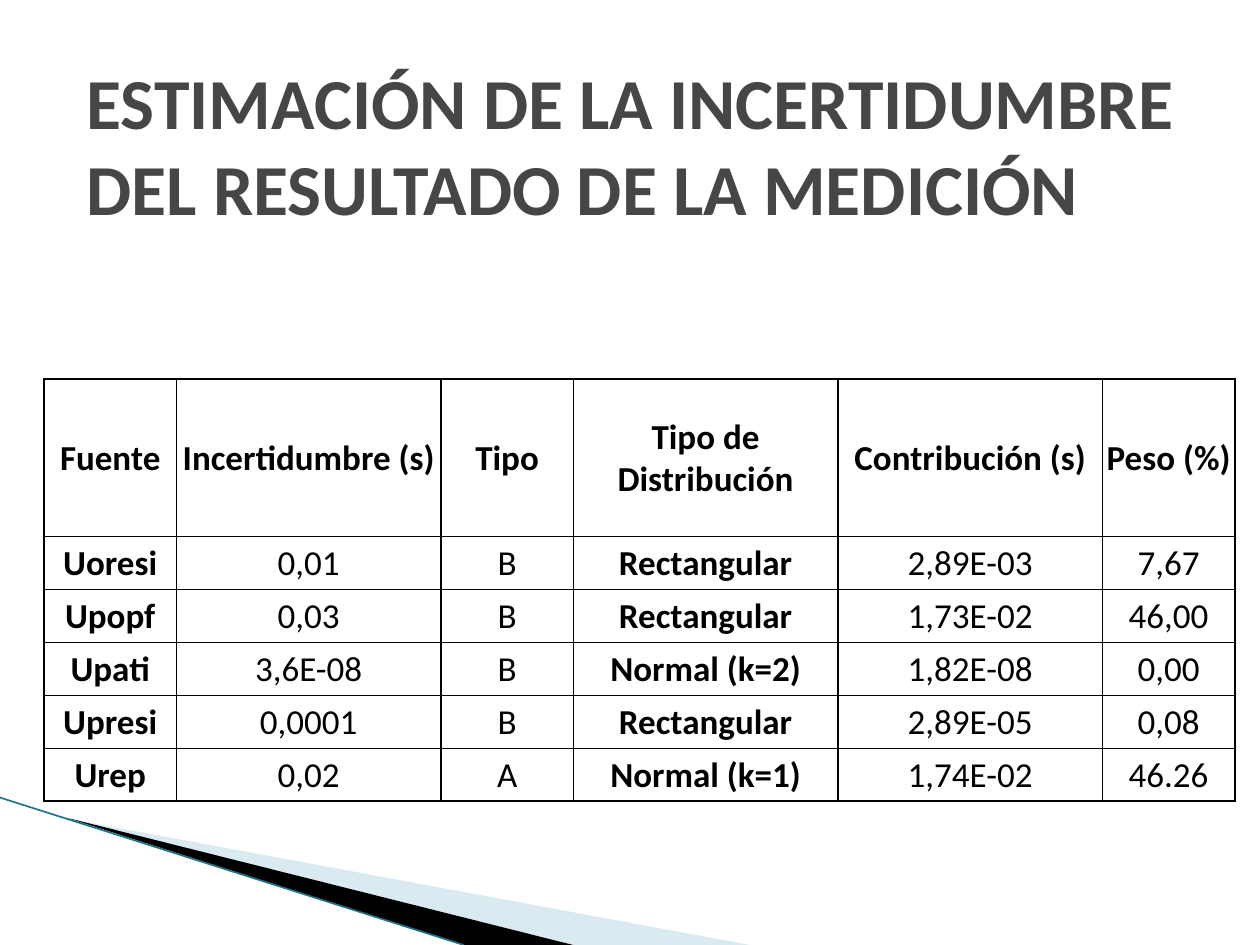
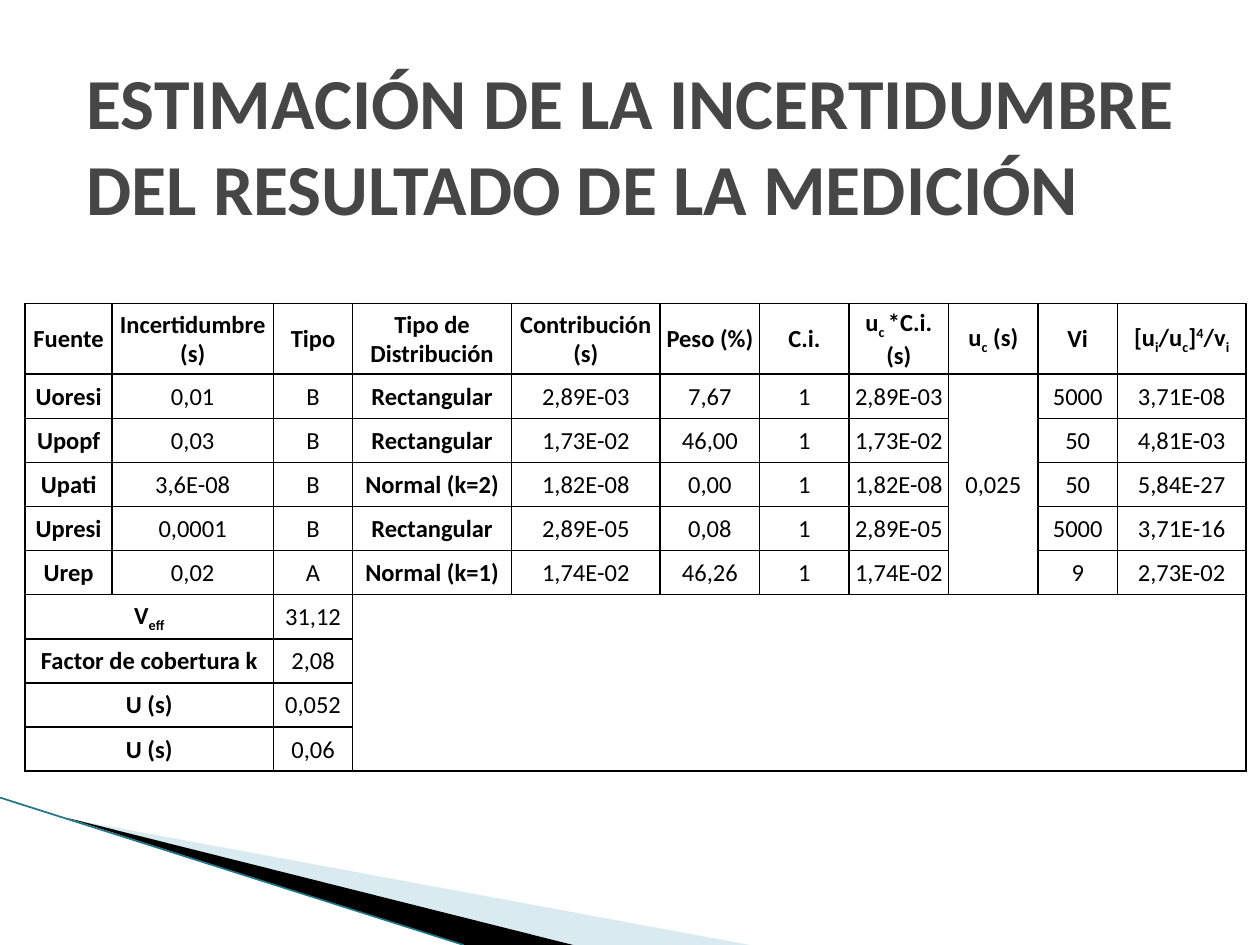
from lxml import etree
from pptx import Presentation
from pptx.dml.color import RGBColor
from pptx.enum.shapes import MSO_CONNECTOR
from pptx.enum.text import MSO_ANCHOR, PP_ALIGN
from pptx.oxml import parse_xml
from pptx.oxml.ns import nsdecls, qn
from pptx.util import Inches, Pt

COLORS = {
    "title": "464646",
    "text": "000000",
    "grid": "000000",
    "pale_band": "A0CBDC",
    "dark_band": "000000",
    "edge": "1F7488",
}
FONT = "Calibri"
TITLE = "ESTIMACIÓN DE LA INCERTIDUMBRE DEL RESULTADO DE LA MEDICIÓN"
TITLE_BOX = (0.59, 0.28, 9.06, 1.73)
CORNER_BOX = (0, 6.33, 5.95, 1.17)
BASELINES = {"_": "-25000", "^": "30000"}
BOLD_COLUMNS = (0, 3)

HEADERS = ["Fuente", "Incertidumbre (s)", "Tipo", "Tipo de Distribución",
           "Contribución (s)", "Peso (%)"]
SOURCES = [
    ["Uoresi", "0,01", "B", "Rectangular", "2,89E-03", "7,67"],
    ["Upopf", "0,03", "B", "Rectangular", "1,73E-02", "46,00"],
    ["Upati", "3,6E-08", "B", "Normal (k=2)", "1,82E-08", "0,00"],
    ["Upresi", "0,0001", "B", "Rectangular", "2,89E-05", "0,08"],
    ["Urep", "0,02", "A", "Normal (k=1)", "1,74E-02", "46,26"],
]
EXTRA_HEADERS = ["C.i.", "u|_c |*C.i. (s)", "u|_c| (s)", "Vi",
                 "[u|_i|/u|_c|]|^4|/v|_i"]
COMBINED = "0,025"
FREEDOM = [("5000", "3,71E-08"), ("50", "4,81E-03"), ("50", "5,84E-27"),
           ("5000", "3,71E-16"), ("9", "2,73E-02")]
SUMMARY = [("V|_eff", "31,12"), ("Factor de cobertura k", "2,08"),
           ("U (s)", "0,052"), ("U (s)", "0,06")]


def rgb(name):
    return RGBColor.from_string(COLORS[name])


def style_font(font, size, color, bold):
    font.name = FONT
    font.size = Pt(size)
    font.bold = bold
    font.color.rgb = rgb(color)


def add_band(slide, box, points, color, opacity=100):
    left, top = box[:2]
    corners = [(Inches(left + x), Inches(top + y)) for x, y in points]
    builder = slide.shapes.build_freeform(*corners[0], scale=1.0)
    builder.add_line_segments(corners[1:], close=True)
    band = builder.convert_to_shape()
    band.shadow.inherit = False
    band.line.fill.background()
    band.fill.solid()
    band.fill.fore_color.rgb = rgb(color)
    if opacity < 100:
        tint = band._element.spPr.find(qn("a:solidFill")).find(qn("a:srgbClr"))
        etree.SubElement(tint, qn("a:alpha")).set("val", str(opacity * 1000))


def add_corner(slide, box):
    left, top, width, height = box
    add_band(slide, box, [(0.55, 0.17), (width, height), (4.56, height)],
             "pale_band", 40)
    add_band(slide, box, [(0.53, 0.16), (4.55, height), (3.68, height)], "dark_band")
    edge = slide.shapes.add_connector(
        MSO_CONNECTOR.STRAIGHT, Inches(left), Inches(top),
        Inches(left + 3.68), Inches(top + height))
    edge.line.color.rgb = rgb("edge")
    edge.line.width = Pt(0.95)
    etree.SubElement(edge._element.spPr, qn("a:effectLst"))


def add_title(slide, box):
    frame = slide.shapes.add_textbox(*map(Inches, box)).text_frame
    frame.word_wrap = True
    frame.vertical_anchor = MSO_ANCHOR.MIDDLE
    heading = frame.paragraphs[0]
    heading.text = TITLE
    style_font(heading.font, 41, "title", True)


def add_borders(cell):
    properties = cell._tc.get_or_add_tcPr()
    for index, side in enumerate("LRTB"):
        properties.insert(index, parse_xml(
            f'<a:ln{side} {nsdecls("a")} w="12700"><a:solidFill>'
            f'<a:srgbClr val="{COLORS["grid"]}"/></a:solidFill></a:ln{side}>'))


def fill_cell(cell, markup, size, bold):
    cell.fill.background()
    add_borders(cell)
    cell.vertical_anchor = MSO_ANCHOR.MIDDLE
    cell.margin_left = cell.margin_right = cell.margin_top = Inches(0.01)
    cell.margin_bottom = 0
    paragraph = cell.text_frame.paragraphs[0]
    paragraph.alignment = PP_ALIGN.CENTER
    style_font(paragraph.font, size, "text", bold)
    for piece in filter(None, markup.split("|")):
        run = paragraph.add_run()
        baseline = BASELINES.get(piece[0])
        run.text = piece[1:] if baseline else piece
        if baseline:
            run._r.get_or_add_rPr().set("baseline", baseline)


def add_budget(slide, corner, widths, heights, rows, size, merges=()):
    box = (*corner, sum(widths), sum(heights))
    table = slide.shapes.add_table(
        len(rows), len(widths), *map(Inches, box)).table
    table.first_row = table.horz_banding = False
    for column, width in zip(table.columns, widths):
        column.width = Inches(width)
    for row, height in zip(table.rows, heights):
        row.height = Inches(height)
    for r, texts in enumerate(rows):
        for c, markup in enumerate(texts):
            fill_cell(table.cell(r, c), markup, size, r == 0 or c in BOLD_COLUMNS)
    for first, last in merges:
        table.cell(*first).merge(table.cell(*last))


def add_base(deck):
    slide = deck.slides.add_slide(deck.slide_layouts[6])
    add_corner(slide, CORNER_BOX)
    add_title(slide, TITLE_BOX)
    return slide


def add_sources_slide(deck):
    last_source = SOURCES[-1][:-1] + ["46.26"]
    rows = [HEADERS, *SOURCES[:-1], last_source]
    widths = [1.05 * units for units in (1, 2, 1, 2, 2, 1)]
    heights = [1.25] + [0.42] * len(SOURCES)
    add_budget(add_base(deck), (0.35, 3.01), widths, heights, rows, 20)


def add_expanded_slide(deck):
    rows = [HEADERS + EXTRA_HEADERS]
    for index, (source, freedom) in enumerate(zip(SOURCES, FREEDOM)):
        combined = COMBINED if index == 0 else ""
        rows.append([*source, "1", source[4], combined, *freedom])
    first = len(rows)
    rows += [[label, "", value] + [""] * 8 for label, value in SUMMARY]
    last = len(rows) - 1
    merges = [((1, 8), (first - 1, 8)), ((first, 3), (last, 10))]
    merges += [((r, 0), (r, 1)) for r in range(first, last + 1)]
    widths = [0.69, 1.28, 0.63, 1.26, 1.18, 0.79, 0.71, 0.79, 0.71, 0.63, 1.02]
    heights = [0.56] + [0.35] * last
    add_budget(add_base(deck), (0.2, 2.41), widths, heights, rows, 14, merges)


def main():
    deck = Presentation()
    deck.slide_width = Inches(10)
    deck.slide_height = Inches(7.5)
    add_sources_slide(deck)
    add_expanded_slide(deck)
    deck.save("out.pptx")


if __name__ == "__main__":
    main()
